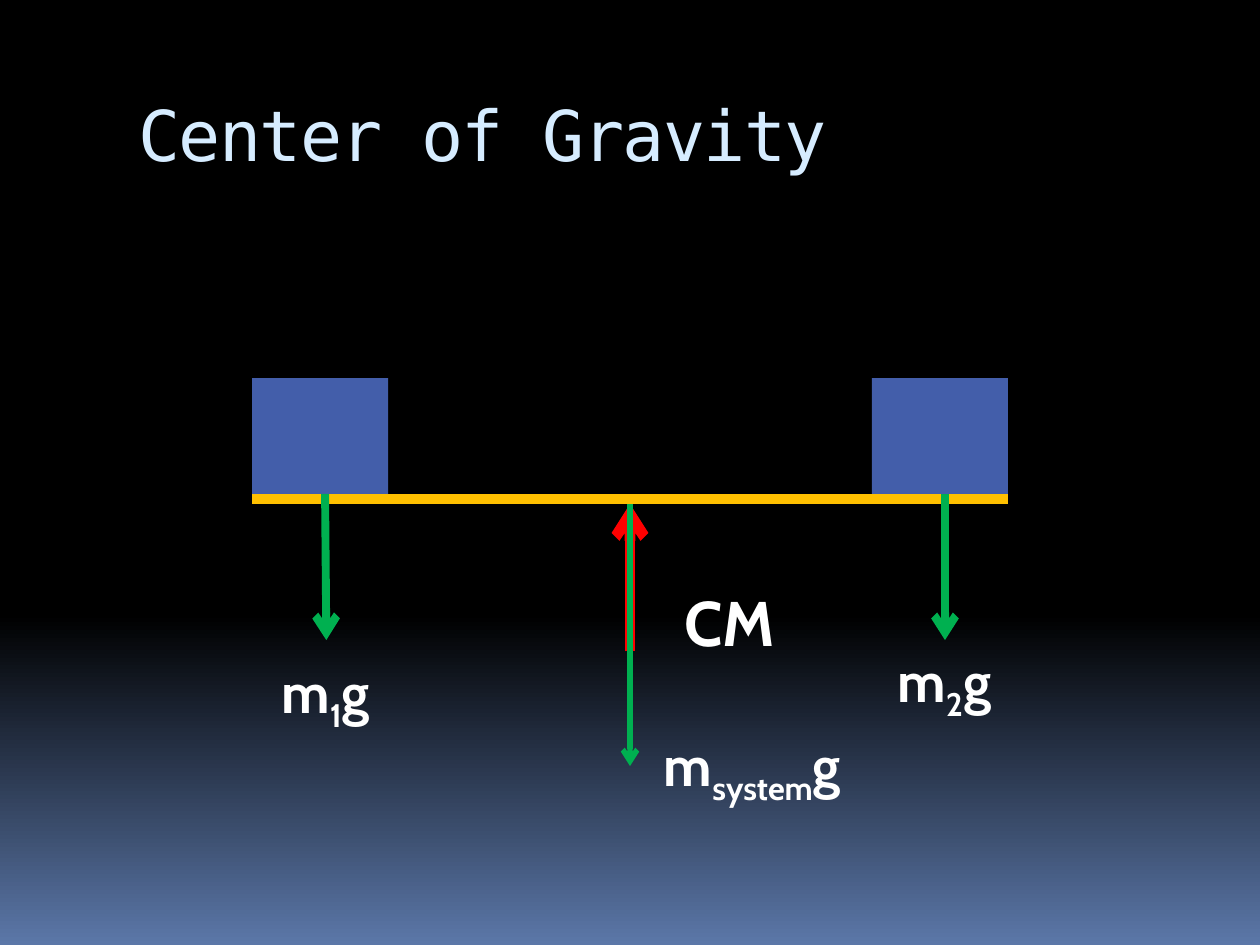
"""Build the Center of Gravity slide: two weights balanced on a beam."""
from lxml.etree import SubElement
from pptx import Presentation
from pptx.dml.color import RGBColor
from pptx.enum.shapes import MSO_CONNECTOR as CONN, MSO_SHAPE as SHAPE
from pptx.enum.text import MSO_ANCHOR as ANCHOR, MSO_AUTO_SIZE as AUTO, PP_ALIGN as ALIGN
from pptx.oxml.ns import qn
from pptx.util import Inches, Pt

COLORS = {"black": "000000", "sky": "5B77A8", "title": "D6ECFF", "beam": "FFC000",
          "box": "435EAA", "support": "FF0000", "weight": "00B050", "text": "FFFFFF"}
TITLE = "Center of Gravity"
BEAM_LEFT, BEAM_RIGHT, BEAM_Y = 2, 8, 3.96
BOX_W, BOX_H, BOX_TOP = 1.08, 0.92, 3
CENTER = (BEAM_LEFT + BEAM_RIGHT) / 2
BOX_BOTTOM = BOX_TOP + BOX_H

BEAM = ((BEAM_LEFT, BEAM_Y), (BEAM_RIGHT, BEAM_Y), "beam", 6, False)
ARROWS = [
    ((CENTER, 5.17), (CENTER, 4), "support", 6, True),
    ((2.58, BOX_BOTTOM), (2.59, 5.08), "weight", 4.5, True),
    ((7.5, BOX_BOTTOM), (7.5, 5.08), "weight", 4.5, True),
    ((CENTER, 4), (CENTER, 6.08), "weight", 3, True),
]
LABELS = [
    ((5.25, 4.58, 1.08, 0.71), ("CM",), 36, ALIGN.CENTER),
    ((1.92, 5.17, 1.33, 0.64), ("m", "1", "g"), 32, ALIGN.CENTER),
    ((6.83, 5.08, 1.33, 0.64), ("m", "2", "g"), 32, ALIGN.CENTER),
    ((5.17, 5.75, 1.75, 0.64), ("m", "system", "g"), 32, ALIGN.LEFT),
]


def rgb(name):
    return RGBColor.from_string(COLORS[name])


def inches(*values):
    return [Inches(v) for v in values]


def add_run(p, text, color, **font):
    r = p.add_run()
    r.text = text
    r.font.color.rgb = rgb(color)
    for key, value in font.items():
        setattr(r.font, key, value)
    return r


def add_line(s, start, end, color, width, arrow):
    c = s.shapes.add_connector(CONN.STRAIGHT, *inches(*start, *end))
    c.line.color.rgb = rgb(color)
    c.line.width = Pt(width)
    if arrow:
        SubElement(c.line._get_or_add_ln(), qn("a:tailEnd"), type="arrow")
    SubElement(c._element.spPr, qn("a:effectLst"))


def add_box(s, left):
    sp = s.shapes.add_shape(SHAPE.RECTANGLE, *inches(left, BOX_TOP, BOX_W, BOX_H))
    sp.shadow.inherit = False
    sp.fill.solid()
    sp.fill.fore_color.rgb = rgb("box")
    sp.line.fill.background()


def add_label(s, place, parts, size, align):
    tf = s.shapes.add_textbox(*inches(*place)).text_frame
    tf.word_wrap = True
    tf.auto_size = AUTO.SHAPE_TO_FIT_TEXT
    p = tf.paragraphs[0]
    p.alignment = align
    for i, part in enumerate(parts):
        r = add_run(p, part, "text", name="Cabin", size=Pt(size), bold=True)
        if i == 1:
            r.font._element.set("baseline", "-25000")


def set_background(s):
    fill = s.background.fill
    fill.gradient()
    fill.gradient_angle = 270
    for stop, (position, color) in zip(fill.gradient_stops, [(0.65, "black"), (1, "sky")]):
        stop.position = position
        stop.color.rgb = rgb(color)


def set_title(s):
    title = s.shapes.title
    title.left, title.top, title.width, title.height = inches(1, 0.56, 8.5, 1)
    tf = title.text_frame
    tf.vertical_anchor = ANCHOR.MIDDLE
    p = tf.paragraphs[0]
    p.alignment = ALIGN.LEFT
    r = add_run(p, TITLE, "title", name="DejaVu Sans Mono", size=Pt(40))
    r.font._element.set("spc", "-100")


def main():
    prs = Presentation()
    prs.slide_width, prs.slide_height = inches(10, 7.5)
    s = prs.slides.add_slide(prs.slide_layouts[5])
    set_background(s)
    set_title(s)
    add_line(s, *BEAM)
    for left in (BEAM_LEFT, BEAM_RIGHT - BOX_W):
        add_box(s, left)
    for arrow in ARROWS:
        add_line(s, *arrow)
    for label in LABELS:
        add_label(s, *label)
    prs.save("out.pptx")


if __name__ == "__main__":
    main()
